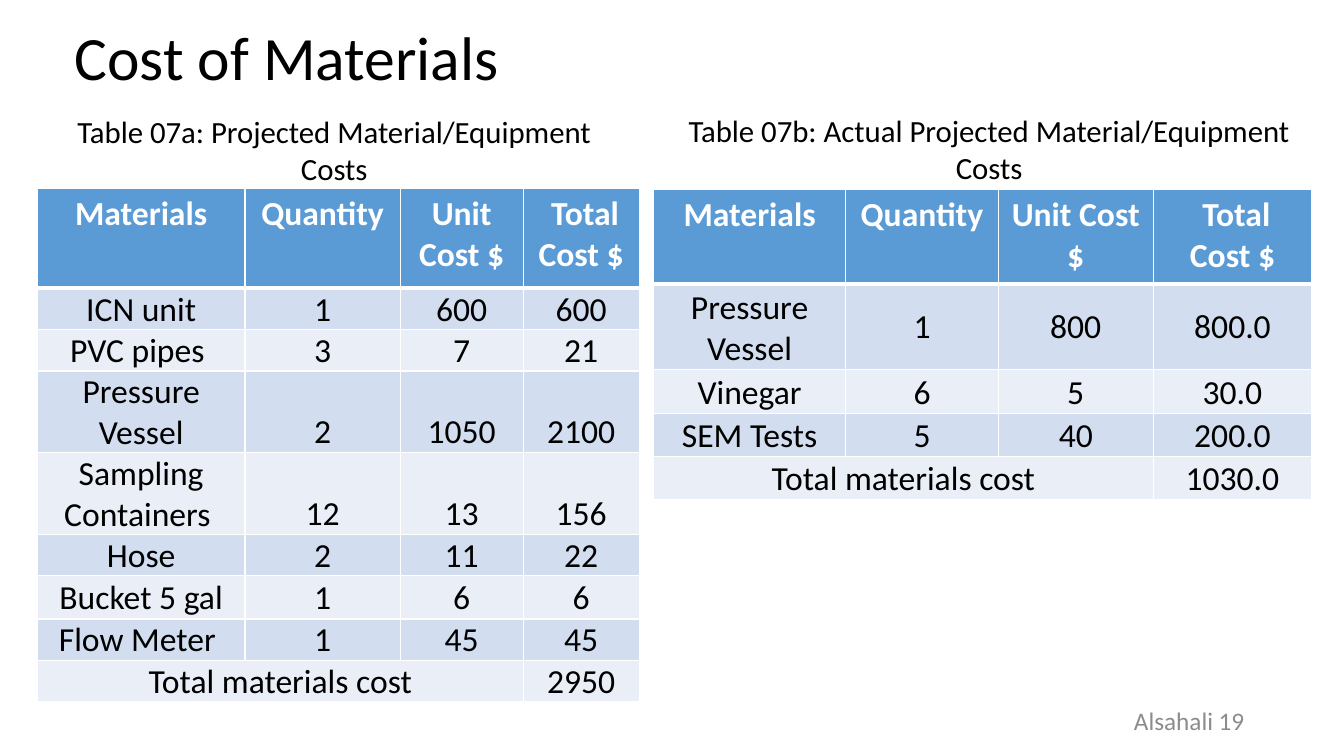
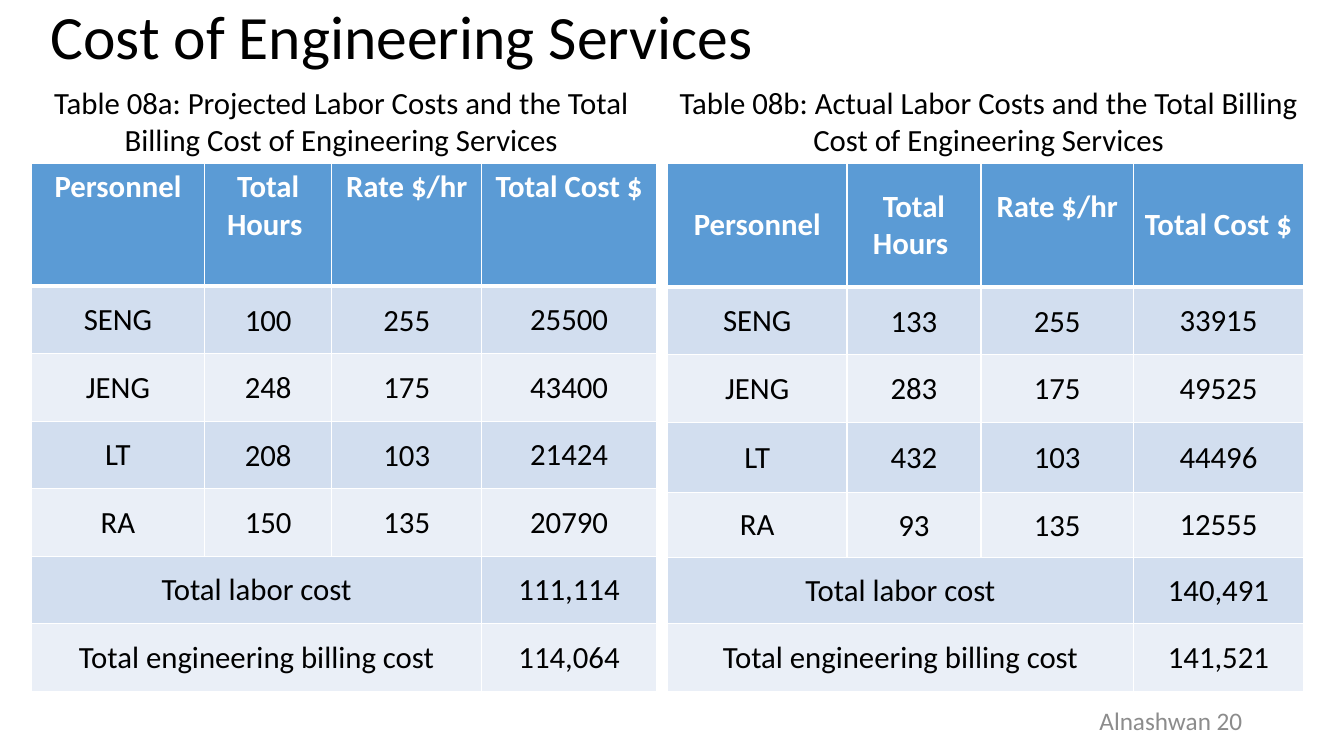
"""Build two slides that compare projected and actual project costs."""
from dataclasses import dataclass

from lxml import etree
from pptx import Presentation
from pptx import slide as slides
from pptx import table as tables
from pptx import util as u
from pptx.dml.color import RGBColor
from pptx.enum import text
from pptx.oxml import ns

FONT = "Calibri"
BLACK = RGBColor(0x00, 0x00, 0x00)
WHITE = RGBColor(0xFF, 0xFF, 0xFF)
GREY = RGBColor(0x8C, 0x8C, 0x8C)
HEADER_BLUE = RGBColor(0x5B, 0x9B, 0xD5)
BANDS = (RGBColor(0xD2, 0xDE, 0xEF), RGBColor(0xEA, 0xEF, 0xF7))

LEFT, CENTER, RIGHT = text.PP_ALIGN.LEFT, text.PP_ALIGN.CENTER, text.PP_ALIGN.RIGHT
TOP, MIDDLE, BOTTOM = text.MSO_ANCHOR.TOP, text.MSO_ANCHOR.MIDDLE, text.MSO_ANCHOR.BOTTOM

TITLE_SIZE, CAPTION_SIZE, FOOTER_SIZE = 44, 22, 18
TIGHT_INSET = 0.01
EXTRA_LINE = 0.42
TITLE_ONLY_LAYOUT = 5

Box = tuple[float, float, float, float]
Row = tuple[str, ...]


@dataclass(frozen=True)
class CostTable:
    """A captioned cost table; a row of two texts is a total whose label spans."""

    caption: str
    caption_box: Box
    origin: tuple[float, float]
    widths: tuple[float, ...]
    heights: tuple[float, ...]
    header: Row
    rows: tuple[Row, ...]
    size: int
    body_anchor: text.MSO_ANCHOR
    tight_columns: tuple[int, ...]
    header_anchor: text.MSO_ANCHOR = TOP
    centered_rows: tuple[int, ...] = ()
    raised_header: str = ""


@dataclass(frozen=True)
class CostPage:
    """A titled page with its cost tables and a signed footer."""

    title: str
    title_box: Box
    footer: str
    footer_left: float
    cost_tables: tuple[CostTable, ...]


MATERIAL_HEADER = ("Materials", "Quantity", "Unit Cost $", " Total Cost $")
LABOR_HEADER = ("Personnel", "Total Hours ", "Rate $/hr", "Total Cost $")

PAGES = (
    CostPage(
        "Cost of Materials", (0.64, 0.28, 5.62, 0.7), "Alsahali 19", 9.44,
        (
            CostTable(
                caption="Table 07a: Projected Material/Equipment Costs",
                caption_box=(0.36, 1.07, 5.91, 0.84),
                origin=(0.37, 1.87),
                widths=(2.06, 1.54, 1.22, 1.15),
                heights=(0.99, 0.39, 0.39, 0.78, 0.78, 0.39, 0.43, 0.39, 0.39),
                header=MATERIAL_HEADER,
                rows=(
                    ("ICN unit", "1", "600", "600"),
                    ("PVC pipes ", "3", "7", "21"),
                    ("Pressure Vessel", "2", "1050", "2100"),
                    ("Sampling Containers ", "12", "13", "156"),
                    ("Hose", "2", "11", "22"),
                    ("Bucket 5 gal", "1", "6", "6"),
                    ("Flow Meter ", "1", "45", "45"),
                    ("Total materials cost", "2950"),
                ),
                size=24, body_anchor=BOTTOM, tight_columns=(0, 1, 2, 3),
            ),
            CostTable(
                caption="Table 07b: Actual Projected Material/Equipment Costs",
                caption_box=(6.4, 1.06, 6.82, 0.84),
                origin=(6.48, 1.88),
                widths=(1.91, 1.51, 1.54, 1.57),
                heights=(0.94, 0.85, 0.43, 0.43, 0.43),
                header=MATERIAL_HEADER,
                rows=(
                    ("Pressure Vessel", "1", "800", "800.0"),
                    ("Vinegar", "6", "5", "30.0"),
                    ("SEM Tests", "5", "40", "200.0"),
                    ("Total materials cost", "1030.0"),
                ),
                size=24, body_anchor=BOTTOM, tight_columns=(0, 1, 2, 3),
                centered_rows=(1,),
            ),
        ),
    ),
    CostPage(
        "Cost of Engineering Services", (0.4, 0.1, 7.7, 0.67), "Alnashwan 20", 9.42,
        (
            CostTable(
                caption="Table 08a: Projected Labor Costs and the Total "
                        "Billing Cost of Engineering Services",
                caption_box=(0.31, 0.78, 6.15, 0.84),
                origin=(0.31, 1.62),
                widths=(1.72, 1.26, 1.49, 1.73),
                heights=(1.22,) + (0.67,) * 6,
                header=LABOR_HEADER,
                rows=(
                    ("SENG", "100", "255", "25500"),
                    ("JENG", "248", "175", "43400"),
                    ("LT", "208", "103", "21424"),
                    ("RA", "150", "135", "20790"),
                    ("Total labor cost", "111,114"),
                    ("Total engineering billing cost", "114,064"),
                ),
                size=22, body_anchor=MIDDLE, tight_columns=(1, 2),
            ),
            CostTable(
                caption="Table 08b: Actual Labor Costs and the Total Billing "
                        "Cost of Engineering Services",
                caption_box=(6.58, 0.78, 6.45, 0.84),
                origin=(6.62, 1.62),
                widths=(1.78, 1.33, 1.51, 1.69),
                heights=(1.23, 0.67, 0.67, 0.7, 0.64, 0.66, 0.67),
                header=LABOR_HEADER,
                rows=(
                    ("SENG", "133", "255", "33915"),
                    ("JENG", "283", "175", "49525"),
                    ("LT", "432", "103", "44496"),
                    ("RA", "93", "135", "12555"),
                    ("Total labor cost", "140,491"),
                    ("Total engineering billing cost", "141,521"),
                ),
                size=22, body_anchor=MIDDLE, tight_columns=(1, 2),
                header_anchor=MIDDLE, raised_header="Rate $/hr",
            ),
        ),
    ),
)


def write(frame, words: str, size: int, color: RGBColor, align: text.PP_ALIGN,
          bold: bool = False) -> None:
    """Fill a text frame with one formatted paragraph."""
    frame.text = words
    para = frame.paragraphs[0]
    para.alignment = align
    para.font.name = FONT
    para.font.size = u.Pt(size)
    para.font.bold = bold
    para.font.color.rgb = color


def add_title(page: slides.Slide, words: str, box: Box) -> None:
    """Place and format the title placeholder."""
    title = page.shapes.title
    title.left, title.top, title.width, title.height = map(u.Inches, box)
    frame = title.text_frame
    write(frame, words, TITLE_SIZE, BLACK, LEFT)
    frame.word_wrap = True
    frame.auto_size = text.MSO_AUTO_SIZE.NONE
    frame.vertical_anchor = BOTTOM
    frame.paragraphs[0].line_spacing = 0.9


def add_label(page: slides.Slide, words: str, box: Box, size: int, color: RGBColor,
              align: text.PP_ALIGN, anchor: text.MSO_ANCHOR = TOP) -> None:
    """Add a wrapped text box."""
    frame = page.shapes.add_textbox(*map(u.Inches, box)).text_frame
    frame.word_wrap = True
    frame.vertical_anchor = anchor
    write(frame, words, size, color, align)


def add_borders(cell: tables._Cell, bottom: float) -> None:
    """Draw white rules round a cell."""
    properties = cell._tc.get_or_add_tcPr()
    for side, points in (("L", 1), ("R", 1), ("T", 1), ("B", bottom)):
        line = etree.SubElement(properties, ns.qn(f"a:ln{side}"), w=str(u.Pt(points)))
        fill = etree.SubElement(line, ns.qn("a:solidFill"))
        etree.SubElement(fill, ns.qn("a:srgbClr"), val=str(WHITE))


def format_header(cell: tables._Cell, words: str, cost: CostTable) -> None:
    """Write a heading cell."""
    write(cell.text_frame, words, cost.size, WHITE, CENTER, bold=True)
    cell.vertical_anchor = cost.header_anchor
    if words == cost.raised_header:
        cell.margin_bottom = u.Inches(EXTRA_LINE)


def format_body(cell: tables._Cell, words: str, cost: CostTable, row: int,
                column: int, is_total: bool) -> None:
    """Write a data cell or a total cell."""
    write(cell.text_frame, words, cost.size, BLACK, CENTER)
    centered = row in cost.centered_rows and column > 0
    cell.vertical_anchor = MIDDLE if centered else cost.body_anchor
    if column in cost.tight_columns and (not is_total or cost.body_anchor == BOTTOM):
        cell.margin_left = cell.margin_right = cell.margin_top = u.Inches(TIGHT_INSET)
        cell.margin_bottom = 0


def add_cost_table(page: slides.Slide, cost: CostTable) -> None:
    """Add a caption and its banded table."""
    add_label(page, cost.caption, cost.caption_box, CAPTION_SIZE, BLACK, CENTER)
    box = (*cost.origin, sum(cost.widths), sum(cost.heights))
    grid = page.shapes.add_table(
        len(cost.heights), len(cost.widths), *map(u.Inches, box)).table
    for column, width in zip(grid.columns, cost.widths):
        column.width = u.Inches(width)
    for line, height in zip(grid.rows, cost.heights):
        line.height = u.Inches(height)

    last = len(cost.widths) - 1
    for row, words in enumerate((cost.header, *cost.rows)):
        is_total = len(words) == 2
        if is_total:
            grid.cell(row, 0).merge(grid.cell(row, last - 1))
        columns = (0, last) if is_total else range(last + 1)
        for column, label in zip(columns, words):
            cell = grid.cell(row, column)
            add_borders(cell, bottom=1 if row else 3)
            cell.fill.solid()
            cell.fill.fore_color.rgb = BANDS[(row - 1) % 2] if row else HEADER_BLUE
            if row:
                format_body(cell, label, cost, row, column, is_total)
            else:
                format_header(cell, label, cost)


def main() -> None:
    """Build and save the deck."""
    deck = Presentation()
    deck.slide_width, deck.slide_height = u.Inches(13.33), u.Inches(7.5)
    for content in PAGES:
        page = deck.slides.add_slide(deck.slide_layouts[TITLE_ONLY_LAYOUT])
        add_title(page, content.title, content.title_box)
        for cost in content.cost_tables:
            add_cost_table(page, cost)
        add_label(page, content.footer, (content.footer_left, 6.95, 3, 0.4),
                  FOOTER_SIZE, GREY, RIGHT, MIDDLE)
    deck.save("out.pptx")


if __name__ == "__main__":
    main()
